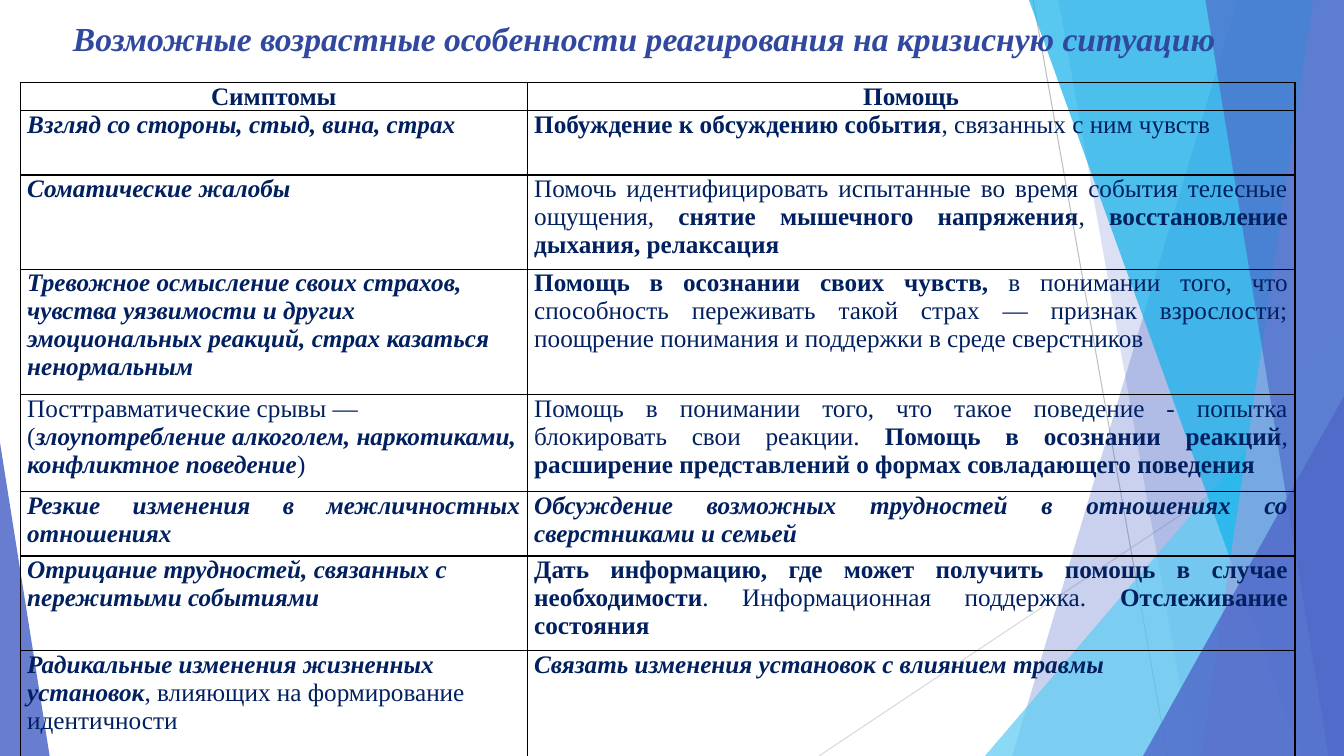
from dataclasses import dataclass

from lxml.etree import SubElement
from pptx import Presentation
from pptx.dml.color import RGBColor
from pptx.enum.shapes import MSO_CONNECTOR, MSO_SHAPE
from pptx.enum.text import MSO_ANCHOR, PP_ALIGN
from pptx.oxml import parse_xml
from pptx.oxml.ns import nsdecls, qn
from pptx.util import Pt


@dataclass(frozen=True)
class Theme:
    font: str = "Times New Roman"
    title_size: float = 24
    body_size: float = 18
    body_leading: float = 20
    title: str = "31489F"
    text: str = "002060"
    border: str = "000000"
    indigo: str = "4E67C8"
    lavender: str = "95A4DE"
    sky: str = "5ECCF3"
    azure: str = "12B2EB"
    gray: str = "BFBFBF"
    light_gray: str = "D9D9D9"


@dataclass(frozen=True)
class Box:
    left: float
    top: float
    width: float
    height: float

    @property
    def right(self):
        return self.left + self.width

    @property
    def bottom(self):
        return self.top + self.height


THEME = Theme()
PAGE = Box(0, 0, 960, 540)
TITLE_BOX = Box(14.4, 9.4, 891.4, 79)
TABLE_BOX = Box(14.4, 59, 910.6, 482)
TITLE = "Возможные возрастные особенности реагирования на кризисную ситуацию"
COLUMN_WIDTHS = (362.2, 548.4)
LEFT, CENTER, JUSTIFY = PP_ALIGN.LEFT, PP_ALIGN.CENTER, PP_ALIGN.JUSTIFY

# Row height, then for each cell its alignment and its spans of text and style
ROWS = [
    (19.7, (CENTER, [("Симптомы", "b")]), (CENTER, [("Помощь", "b")])),
    (46, (JUSTIFY, [("Взгляд со стороны, стыд, вина, страх", "bi")]),
     (JUSTIFY, [("Побуждение к обсуждению события", "b"), (", связанных с ним чувств", "")])),
    (67.3, (JUSTIFY, [("Соматические жалобы", "bi")]),
     (JUSTIFY, [("Помочь идентифицировать испытанные во время события телесные ощущения, ", ""),
                ("снятие мышечного напряжения", "b"), (", ", ""),
                ("восстановление дыхания, релаксация", "b")])),
    (89.6, (LEFT, [("Тревожное осмысление своих страхов, чувства уязвимости и других "
                    "эмоциональных реакций, страх казаться ненормальным", "bi")]),
     (JUSTIFY, [("Помощь в осознании своих чувств,", "b"),
                (" в понимании того, что способность переживать такой страх — признак "
                 "взрослости; поощрение понимания и поддержки в среде сверстников", "")])),
    (69.3, (LEFT, [("Посттравматические срывы — (", ""),
                   ("злоупотребление алкоголем, наркотиками, конфликтное поведение", "bi"),
                   (")", "")]),
     (JUSTIFY, [("Помощь в понимании того, что такое поведение - попытка "
                 "блокировать свои реакции. ", ""),
                ("Помощь в осознании реакций", "b"), (", ", ""),
                ("расширение представлений о формах совладающего поведения", "b")])),
    (46, (JUSTIFY, [("Резкие изменения в межличностных отношениях", "bi")]),
     (JUSTIFY, [("Обсуждение возможных трудностей в отношениях со сверстниками и семьей", "bi")])),
    (67.8, (LEFT, [("Отрицание трудностей, связанных с пережитыми событиями", "bi")]),
     (JUSTIFY, [("Дать информацию, где может получить помощь в случае необходимости", "b"),
                (". Информационная поддержка. ", ""), ("Отслеживание состояния", "b")])),
    (76.3, (LEFT, [("Радикальные изменения жизненных установок", "bi"),
                   (", влияющих на формирование идентичности", "")]),
     (JUSTIFY, [("Связать изменения установок с влиянием травмы", "bi")])),
]


def add_span(para, text, *, size, color, bold=False, italic=False):
    span = para.add_run()
    span.text = text
    font = span.font
    font.name, font.size = THEME.font, Pt(size)
    font.bold, font.italic = bold, italic
    font.color.rgb = RGBColor.from_string(color)


def paint(shape, color, opacity):
    """Give the shape a translucent fill without outline or shadow; opacity is in percent."""
    shape.shadow.inherit = False
    shape.line.fill.background()
    shape.fill.solid()
    shape.fill.fore_color.rgb = RGBColor.from_string(color)
    color_element = shape.element.spPr.find(qn("a:solidFill"))[0]
    SubElement(color_element, qn("a:alpha")).set("val", str(opacity * 1000))


def add_band(page, box, top_x, bottom_x, color, opacity):
    """Fill the area between a slanted left edge and the right side of the box."""
    outline = page.shapes.build_freeform(Pt(box.left + top_x), Pt(box.top))
    outline.add_line_segments([
        (Pt(box.right), Pt(box.top)),
        (Pt(box.right), Pt(box.bottom)),
        (Pt(box.left + bottom_x), Pt(box.bottom)),
    ])
    paint(outline.convert_to_shape(), color, opacity)


def add_corner(page, box, width, height, color, opacity, at_right=True):
    """Place a right triangle in a bottom corner of the box."""
    left = box.right - width if at_right else box.left
    triangle = page.shapes.add_shape(MSO_SHAPE.ISOSCELES_TRIANGLE, Pt(left),
                                     Pt(box.bottom - height), Pt(width), Pt(height))
    triangle.adjustments[0] = 1 if at_right else 0
    paint(triangle, color, opacity)


def add_thin_line(page, box, start, end, color):
    line = page.shapes.add_connector(
        MSO_CONNECTOR.STRAIGHT, Pt(box.left + start[0]), Pt(box.top + start[1]),
        Pt(box.left + end[0]), Pt(box.top + end[1]))
    line.line.width = Pt(0.75)
    line.line.color.rgb = RGBColor.from_string(color)
    SubElement(line.element.spPr, qn("a:effectLst"))


def add_backdrop(page, box):
    add_thin_line(page, box, (738, 0), (834, box.height), THEME.gray)
    add_thin_line(page, box, (box.width, 290), (585, box.height), THEME.light_gray)
    add_band(page, box, 884, 723, THEME.indigo, 30)
    add_band(page, box, 756, 852, THEME.indigo, 20)
    add_corner(page, box, 256.5, 300, THEME.sky, 72)
    add_band(page, box, 735, 929.5, THEME.azure, 70)
    add_band(page, box, 938, 858, THEME.lavender, 70)
    add_band(page, box, 861, 949, THEME.indigo, 65)
    add_corner(page, box, 143.5, 257, THEME.indigo, 80)
    add_corner(page, box, 35.5, 224, THEME.indigo, 85, at_right=False)


def add_title(page, box):
    """Fill the title placeholder and bring it in front of the backdrop."""
    title = page.shapes.title
    title.element.getparent().append(title.element)
    title.left, title.top = Pt(box.left), Pt(box.top)
    title.width, title.height = Pt(box.width), Pt(box.height)
    frame = title.text_frame
    frame.word_wrap = True
    frame.vertical_anchor = MSO_ANCHOR.TOP
    para = frame.paragraphs[0]
    para.alignment = CENTER
    add_span(para, TITLE, size=THEME.title_size, color=THEME.title, bold=True, italic=True)


def set_borders(cell):
    properties = cell._tc.get_or_add_tcPr()
    for position, side in enumerate("LRTB"):
        properties.insert(position, parse_xml(
            f'<a:ln{side} {nsdecls("a")} w="{Pt(1)}"><a:solidFill>'
            f'<a:srgbClr val="{THEME.border}"/></a:solidFill></a:ln{side}>'))


def fill_cell(cell, alignment, spans):
    cell.margin_left = cell.margin_right = Pt(5)
    cell.margin_top = cell.margin_bottom = 0
    cell.vertical_anchor = MSO_ANCHOR.TOP
    cell.fill.background()
    set_borders(cell)
    para = cell.text_frame.paragraphs[0]
    para.alignment = alignment
    para.line_spacing = Pt(THEME.body_leading)
    for text, style in spans:
        add_span(para, text, size=THEME.body_size, color=THEME.text,
                 bold="b" in style, italic="i" in style)


def add_symptom_table(page, box):
    table = page.shapes.add_table(len(ROWS), len(COLUMN_WIDTHS), Pt(box.left), Pt(box.top),
                                  Pt(box.width), Pt(box.height)).table
    table.first_row = table.horz_banding = False
    for column, width in zip(table.columns, COLUMN_WIDTHS):
        column.width = Pt(width)
    for row, (height, *contents) in zip(table.rows, ROWS):
        row.height = Pt(height)
        for cell, (alignment, spans) in zip(row.cells, contents):
            fill_cell(cell, alignment, spans)


def main():
    deck = Presentation()
    deck.slide_width, deck.slide_height = Pt(PAGE.width), Pt(PAGE.height)
    page = deck.slides.add_slide(deck.slide_layouts.get_by_name("Title Only"))
    add_backdrop(page, PAGE)
    add_title(page, TITLE_BOX)
    add_symptom_table(page, TABLE_BOX)
    deck.save("out.pptx")


if __name__ == "__main__":
    main()
